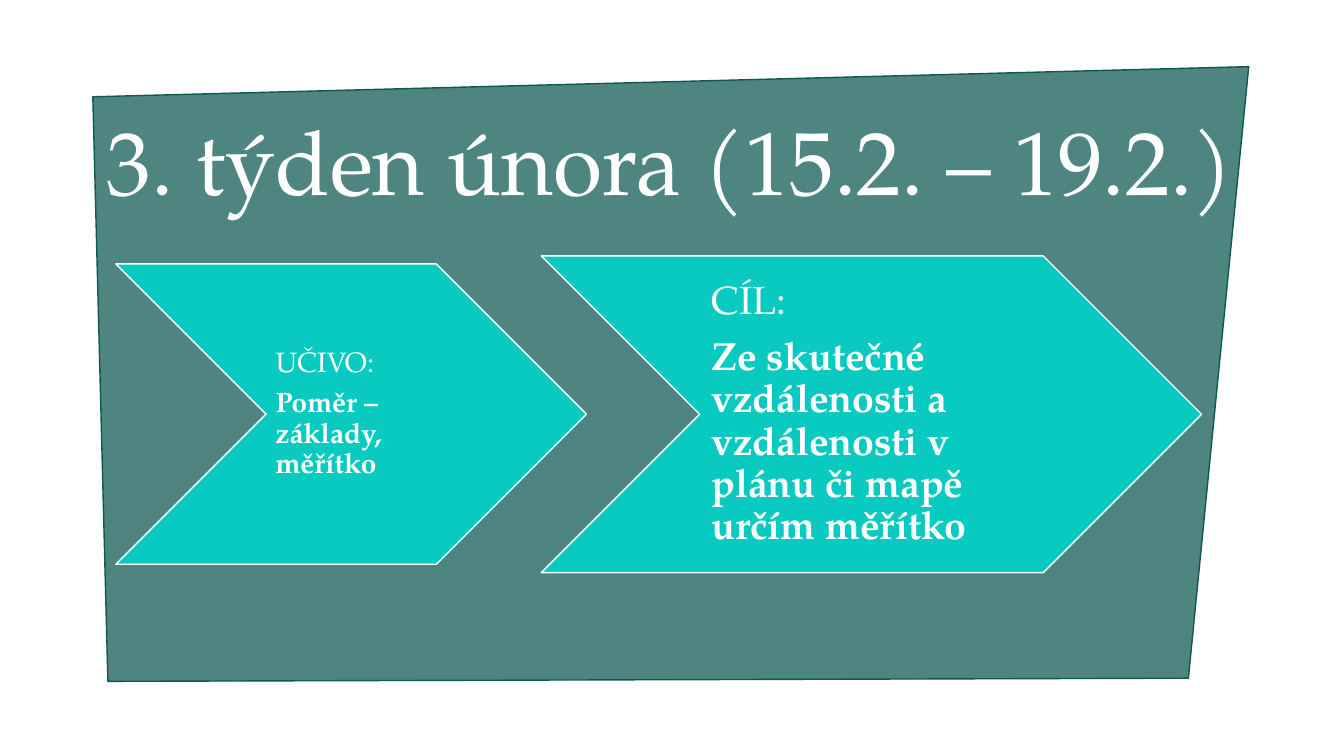
from lxml.etree import SubElement
from pptx import Presentation
from pptx.dml.color import RGBColor
from pptx.enum.shapes import MSO_SHAPE as Preset
from pptx.enum.text import MSO_ANCHOR as Anchor, MSO_AUTO_SIZE as AutoSize, PP_ALIGN as Align
from pptx.oxml.ns import qn
from pptx.util import Cm, Pt

FONT = "TeX Gyre Pagella"
WHITE, TEAL, DARK = "FFFFFF", "08CAC1", "0F5851"
BACKDROP_OPACITY = 73
BACKDROP = [(2.72, 17.17), (2.34, 2.44), (31.47, 1.68), (29.95, 17.09)]

TITLE = "3. týden února (15.2. – 19.2.)"
TITLE_BOX = (2.11, 2.54, 29.54, 3.0)

# box in cm, text size, inset in cm, heading, body
CHEVRONS = [
    ((2.92, 6.65, 11.86, 7.57), 20, 0.08, "UČIVO:", "Poměr – základy, měřítko"),
    ((13.64, 6.45, 16.64, 7.98), 28, 0.1, "CÍL:",
     "Ze skutečné vzdálenosti a vzdálenosti v plánu či mapě určím měřítko"),
]


def color(code):
    return RGBColor.from_string(code)


def paint(shape, fill, line):
    shape.shadow.inherit = False
    shape.fill.solid()
    shape.fill.fore_color.rgb = color(fill)
    shape.line.color.rgb = color(line)
    shape.line.width = Pt(1)


def write(para, text, size, bold=False, align=Align.LEFT, after=0):
    para.alignment = align
    para.line_spacing = 0.9
    para.space_before = Pt(0)
    para.space_after = Pt(after)
    span = para.add_run()
    span.text = text
    span.font.name = FONT
    span.font.size = Pt(size)
    span.font.bold = bold
    span.font.color.rgb = color(WHITE)


def add_backdrop(page):
    points = [(Cm(x), Cm(y)) for x, y in BACKDROP]
    builder = page.shapes.build_freeform(*points[0], scale=1.0)
    builder.add_line_segments(points[1:], close=True)
    backdrop = builder.convert_to_shape()
    paint(backdrop, DARK, DARK)
    fill_code = backdrop.fill.fore_color._xFill.find(qn("a:srgbClr"))
    SubElement(fill_code, qn("a:alpha"), val=str(BACKDROP_OPACITY * 1000))


def add_title(page):
    title = page.shapes.title
    title.left, title.top, title.width, title.height = map(Cm, TITLE_BOX)
    frame = title.text_frame
    frame.word_wrap = True
    frame.auto_size = AutoSize.NONE
    frame.vertical_anchor = Anchor.BOTTOM
    write(frame.paragraphs[0], TITLE, 64, align=Align.CENTER)
    page.shapes._spTree.append(title._element)  # in front of the backdrop


def add_chevron(page, box, size, inset, heading, body):
    chevron = page.shapes.add_shape(Preset.CHEVRON, *map(Cm, box))
    paint(chevron, TEAL, WHITE)
    frame = chevron.text_frame
    frame.word_wrap = True
    frame.vertical_anchor = Anchor.MIDDLE
    frame.margin_left = Cm(3 * inset)
    frame.margin_right = frame.margin_top = frame.margin_bottom = Cm(inset)
    after = 0.35 * size
    write(frame.paragraphs[0], heading, size, after=after)
    write(frame.add_paragraph(), body, size, bold=True, after=after)


def main():
    deck = Presentation()
    deck.slide_width, deck.slide_height = Cm(33.87), Cm(19.05)
    page = deck.slides.add_slide(deck.slide_layouts[5])
    add_backdrop(page)
    add_title(page)
    for chevron in CHEVRONS:
        add_chevron(page, *chevron)
    deck.save("out.pptx")


if __name__ == "__main__":
    main()
